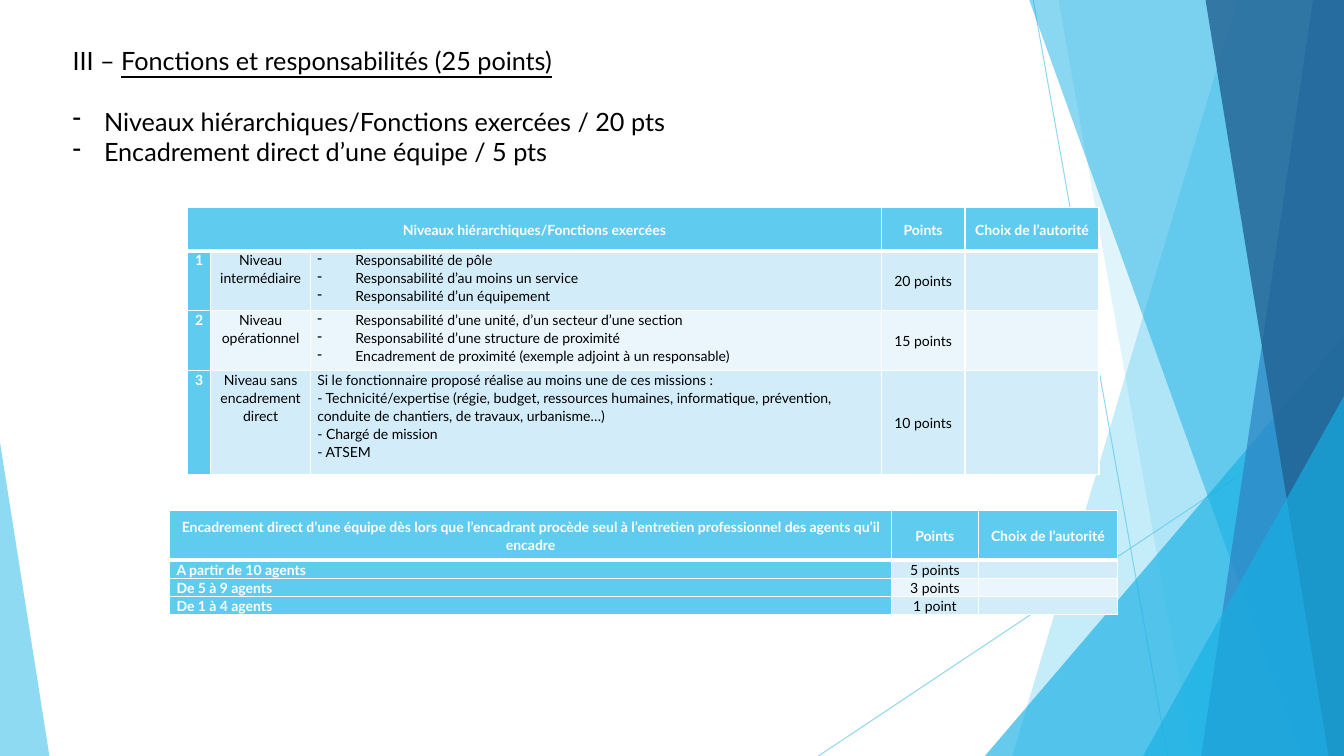
from lxml import etree
from pptx import Presentation
from pptx.dml.color import RGBColor
from pptx.enum import shapes, text
from pptx.oxml.ns import qn
from pptx.util import Pt

THEME = {
    "font": "Lato", "title": 18, "body": 10, "space": 1.07,
    "black": "000000", "white": "FFFFFF", "sky": "5FCBEF", "cyan": "17B0E4",
    "blue": "2E83C3", "navy": "226292", "odd": "D2ECF9", "even": "EAF6FC",
}
WIDE, HIGH = 960, 540

HEAD = ("III – ", "Fonctions et responsabilités (25 points)")
ITEMS = [
    "Niveaux hiérarchiques/Fonctions exercées / 20 pts",
    "Encadrement direct d’une équipe / 5 pts",
]

RAYS = [((738, 0), (834, 540)), ((960, 290), (584.6, 540))]
ART = [
    ("band", (884, 723), "sky", 36),
    ("band", (756, 852), "sky", 20),
    ("wedge", (703.5, 239.8, 256.5, 300.2, 1), "cyan", 66),
    ("band", (735, 929.5), "cyan", 50),
    ("band", (938, 858), "blue", 70),
    ("band", (861, 949), "navy", 80),
    ("wedge", (816.5, 283, 143.5, 257, 1), "cyan", 66),
    ("wedge", (0, 316, 35.3, 224, 0), "sky", 70),
]

TABLES = [
    {
        "at": (134, 148.3), "cols": (16.5, 71.3, 407.6, 60, 95.6),
        "rows": (31, 42.8, 42.8, 74.2),
        "align": "cclcc", "anchor": "tttmm", "span": 3,
        "cells": [
            ("Niveaux hiérarchiques/Fonctions exercées", "", "", "Points", "Choix de l’autorité"),
            ("1", "Niveau intermédiaire",
             ["Responsabilité de pôle", "Responsabilité d’au moins un service",
              "Responsabilité d’un équipement"], "20 points", ""),
            ("2", "Niveau opérationnel",
             ["Responsabilité d’une unité, d’un secteur d’une section",
              "Responsabilité d’une structure de proximité",
              "Encadrement de proximité (exemple adjoint à un responsable)"], "15 points", ""),
            ("3", "Niveau sans encadrement direct",
             ("Si le fonctionnaire proposé réalise au moins une de ces missions :",
              "- Technicité/expertise (régie, budget, ressources humaines, informatique, "
              "prévention, conduite de chantiers, de travaux, urbanisme…)",
              "- Chargé de mission", "- ATSEM"), "10 points", ""),
        ],
    },
    {
        "at": (121.3, 364.6), "cols": (515.5, 62, 99.4),
        "rows": (35.5, 12.9, 12.9, 12.9),
        "align": "lcc", "anchor": "ttt", "span": 1,
        "cells": [
            ("Encadrement direct d’une équipe dès lors que l’encadrant procède seul à "
             "l’entretien professionnel des agents qu’il encadre", "Points", "Choix de l’autorité"),
            ("A partir de 10 agents", "5 points", ""),
            ("De 5 à 9 agents", "3 points", ""),
            ("De 1 à 4 agents", "1 point", ""),
        ],
    },
]

ALIGN = {"c": text.PP_ALIGN.CENTER, "l": text.PP_ALIGN.LEFT}
ANCHOR = {"t": text.MSO_ANCHOR.TOP, "m": text.MSO_ANCHOR.MIDDLE}


def tint(name):
    return RGBColor.from_string(THEME[name])


def apply(thing, form):
    for key, val in form.items():
        setattr(thing, key, val)


def paint(fill, name):
    fill.solid()
    fill.fore_color.rgb = tint(name)


def fade(shape, rate):
    for clr in shape.element.iter(qn("a:srgbClr")):
        etree.SubElement(clr, qn("a:alpha"), val=str(rate * 1000))


def write(para, words, size, name="black", **form):
    run = para.add_run()
    run.text = words
    apply(run.font, {"name": THEME["font"], "size": Pt(THEME[size]), "bold": False, **form})
    run.font.color.rgb = tint(name)


def dash(para, gap):
    props = para._p.get_or_add_pPr()
    props.set("marL", str(Pt(gap)))
    props.set("indent", str(-Pt(gap)))
    etree.SubElement(props, qn("a:buChar"), char="-")


def draw_art(slide):
    for start, end in RAYS:
        ray = slide.shapes.add_connector(
            shapes.MSO_CONNECTOR.STRAIGHT, *(Pt(n) for n in start + end))
        ray.line.width = Pt(0.75)
        paint(ray.line.fill, "sky")
        etree.SubElement(ray.element.spPr, qn("a:effectLst"))
        fade(ray, 70)
    for kind, geo, name, rate in ART:
        if kind == "band":
            top, low = geo
            pen = slide.shapes.build_freeform(Pt(top), Pt(-0.6), scale=1.0)
            pen.add_line_segments(
                [(Pt(WIDE), Pt(-0.6)), (Pt(WIDE), Pt(HIGH)), (Pt(low), Pt(HIGH))], close=True)
            shape = pen.convert_to_shape()
        else:
            *box, peak = geo
            shape = slide.shapes.add_shape(
                shapes.MSO_SHAPE.ISOSCELES_TRIANGLE, *(Pt(n) for n in box))
            shape.adjustments[0] = peak
        shape.shadow.inherit = False
        shape.line.fill.background()
        paint(shape.fill, name)
        fade(shape, rate)


def fill_title(slide):
    title = slide.shapes.title
    title.element.getparent().append(title.element)
    apply(title, {"left": Pt(44.6), "top": Pt(28.8), "width": Pt(850), "height": Pt(291)})
    frame = title.text_frame
    apply(frame, {"word_wrap": True, "auto_size": text.MSO_AUTO_SIZE.NONE,
                  "vertical_anchor": text.MSO_ANCHOR.TOP})
    para = frame.paragraphs[0]
    para.alignment = ALIGN["l"]
    write(para, HEAD[0], "title")
    write(para, HEAD[1], "title", underline=True)
    for row, item in enumerate(ITEMS):
        para = frame.add_paragraph()
        apply(para, {"alignment": ALIGN["l"], "space_before": Pt(0 if row else 21.6)})
        dash(para, 22.5)
        write(para, item, "title")


def edge(cell, row):
    props = cell._tc.get_or_add_tcPr()
    sides = {"L": 1, "R": 1, "T": 3 if row == 1 else 1, "B": 1 if row else 3}
    for place, (side, width) in enumerate(sides.items()):
        line = etree.Element(qn("a:ln" + side), w=str(Pt(width)))
        fill = etree.SubElement(line, qn("a:solidFill"))
        etree.SubElement(fill, qn("a:srgbClr"), val=THEME["white"])
        props.insert(place, line)


def fill_cell(cell, words, row, col, data):
    bold = row == 0 or col == 0
    paint(cell.fill, "sky" if bold else "odd" if row % 2 else "even")
    apply(cell, {"margin_left": Pt(4.9), "margin_right": Pt(4.9),
                 "margin_top": 0, "margin_bottom": 0,
                 "vertical_anchor": ANCHOR["m" if row == 0 else data["anchor"][col]]})
    edge(cell, row)
    frame = cell.text_frame
    for num, line in enumerate([words] if isinstance(words, str) else words):
        para = frame.add_paragraph() if num else frame.paragraphs[0]
        apply(para, {"alignment": ALIGN["c" if row == 0 else data["align"][col]],
                     "line_spacing": THEME["space"]})
        if isinstance(words, list):
            dash(para, 27.2)
        if line:
            write(para, line, "body", "white" if bold else "black", bold=bold)
        else:
            etree.SubElement(para._p, qn("a:endParaRPr"), sz=str(THEME["body"] * 100))


def draw_table(slide, data):
    cols, rows = data["cols"], data["rows"]
    box = (*data["at"], sum(cols), sum(rows))
    table = slide.shapes.add_table(len(rows), len(cols), *(Pt(n) for n in box)).table
    for col, width in zip(table.columns, cols):
        col.width = Pt(width)
    for row, height in zip(table.rows, rows):
        row.height = Pt(height)
    if data["span"] > 1:
        table.cell(0, 0).merge(table.cell(0, data["span"] - 1))
    for row, line in enumerate(data["cells"]):
        for col, words in enumerate(line):
            fill_cell(table.cell(row, col), words, row, col, data)


def main():
    deck = Presentation()
    apply(deck, {"slide_width": Pt(WIDE), "slide_height": Pt(HIGH)})
    slide = deck.slides.add_slide(deck.slide_layouts[5])
    draw_art(slide)
    fill_title(slide)
    for data in TABLES:
        draw_table(slide, data)
    deck.save("out.pptx")


if __name__ == "__main__":
    main()
